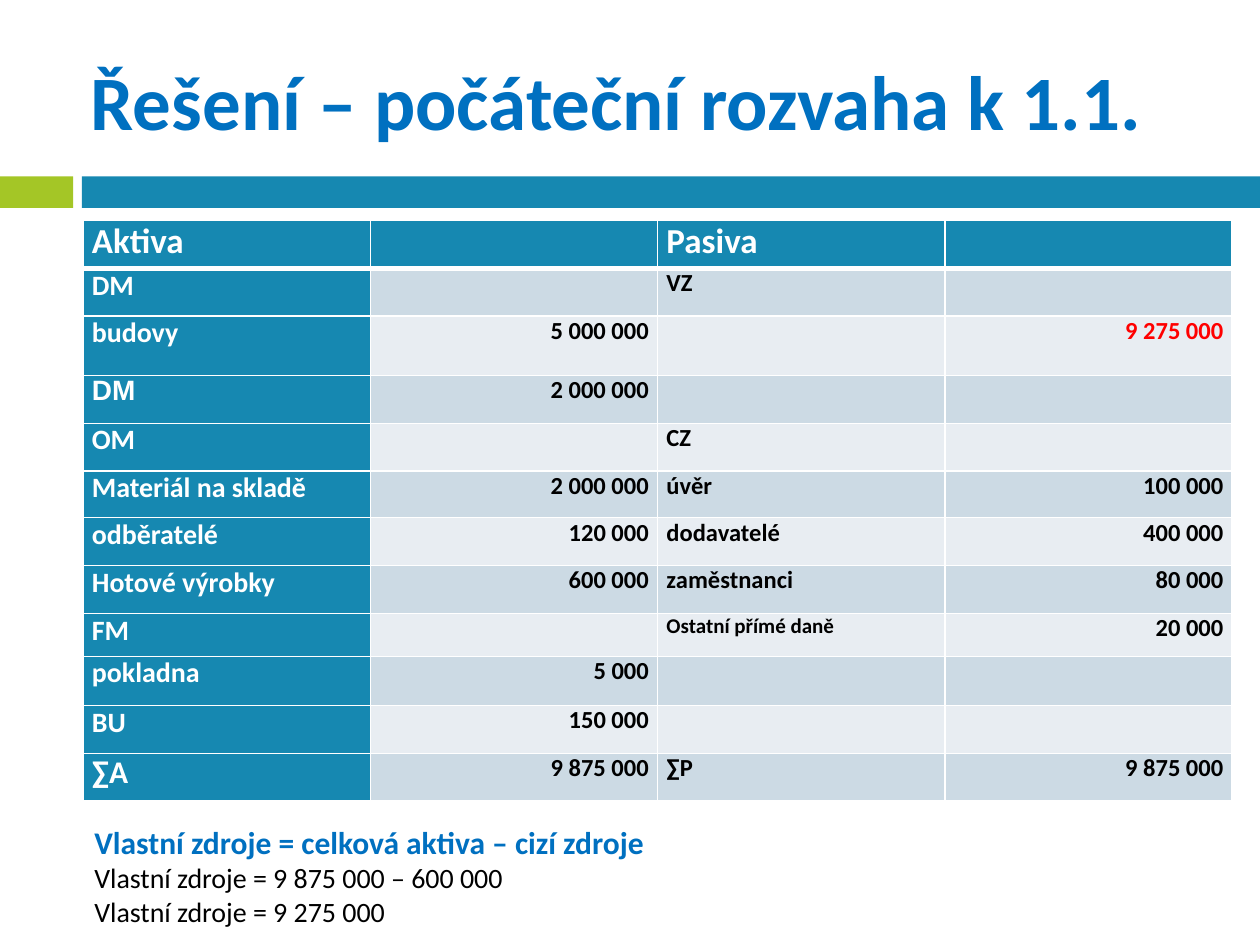
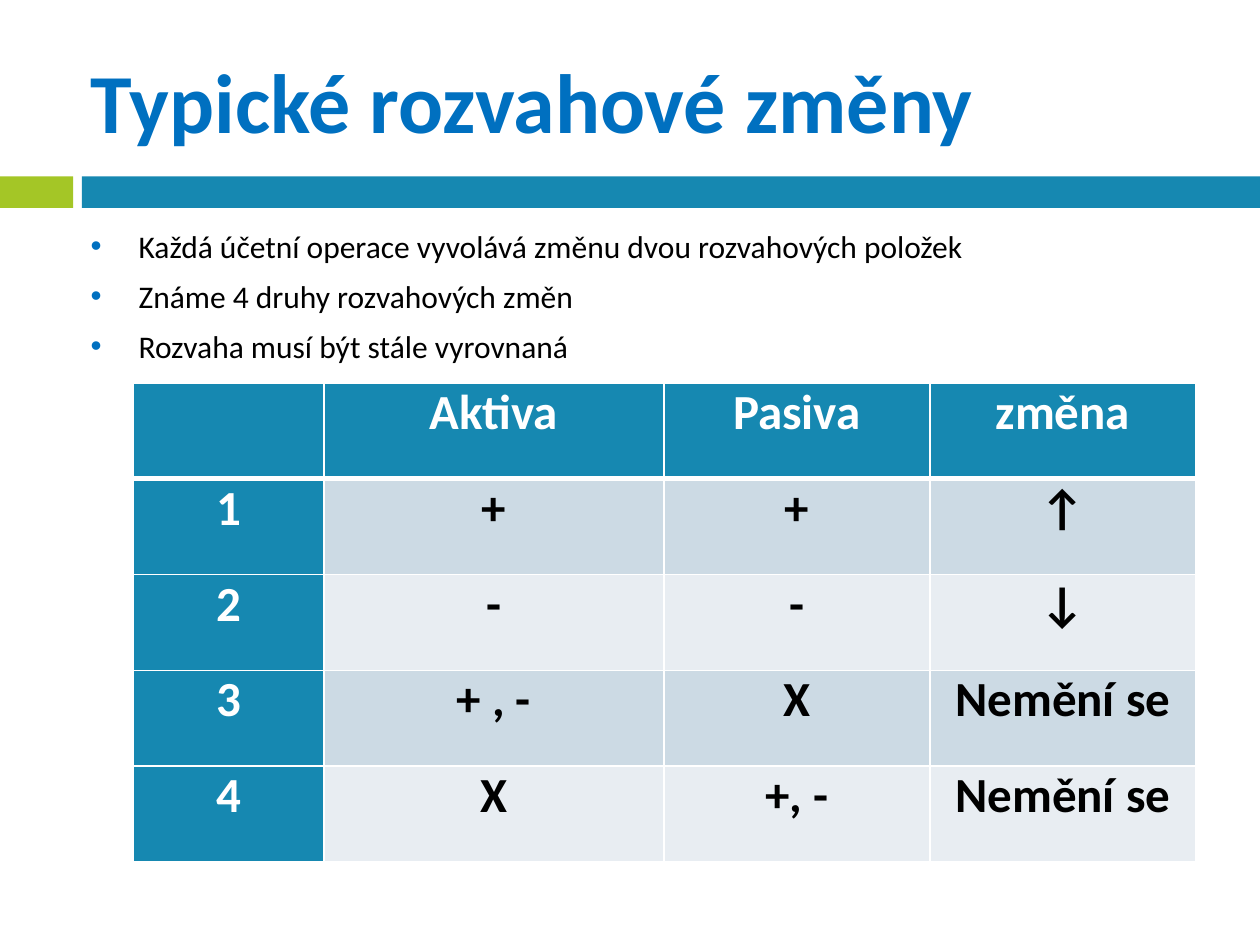
from lxml.etree import SubElement
from pptx import Presentation
from pptx.dml.color import RGBColor
from pptx.enum.shapes import MSO_SHAPE
from pptx.enum.text import MSO_ANCHOR, PP_ALIGN
from pptx.oxml import parse_xml
from pptx.oxml.ns import nsdecls, qn
from pptx.util import Inches, Pt

BLUE, TEAL, GREEN = "0070C0", "1688B1", "A4C626"
WHITE, BLACK, RED = "FFFFFF", "000000", "FF0000"
BANDS = ("CCDAE4", "E8EDF2")
FONT = "Calibri"
SIDES = ("L", "R", "T", "B")

BALANCE_SHEET = [
    ("Aktiva", "", "Pasiva", ""),
    ("DM", "", "VZ", ""),
    ("budovy", "5 000 000", "", "9 275 000"),
    ("DM", "2 000 000", "", ""),
    ("OM", "", "CZ", ""),
    ("Materiál na skladě", "2 000 000", "úvěr", "100 000"),
    ("odběratelé", "120 000", "dodavatelé", "400 000"),
    ("Hotové výrobky", "600 000", "zaměstnanci", "80 000"),
    ("FM", "", "Ostatní přímé daně", "20 000"),
    ("pokladna", "5 000", "", ""),
    ("BU", "150 000", "", ""),
    ("∑A", "9 875 000", "∑P", "9 875 000"),
]
BALANCE_HEIGHTS = [0.38, 0.38, 0.47, 0.38, 0.38, 0.37,
                   0.38, 0.38, 0.34, 0.39, 0.38, 0.38]
BALANCE_EXCEPTIONS = {
    (2, 3): {"color": RED},
    (3, 0): {"font": "Arial"},
    (8, 2): {"size": 12},
    (11, 0): {"size": 18},
}
CHANGES = [
    ("", "Aktiva", "Pasiva", "změna"),
    ("1", "+", "+", "↑"),
    ("2", "-", "-", "↓"),
    ("3", "+ , -", "X", "Nemění se"),
    ("4", "X", "+, -", "Nemění se"),
]


def rgb(value):
    return RGBColor.from_string(value)


class Deck:
    """Holds the shared style and the slide being filled."""

    def __init__(self):
        self.prs = Presentation()
        self.prs.slide_width, self.prs.slide_height = Inches(10), Inches(7.5)
        self.slide = None

    def add_slide(self, title, size):
        self.slide = self.prs.slides.add_slide(self.prs.slide_layouts[6])
        self.band(0, 0.58, GREEN)
        self.band(0.65, 9.35, TEAL)
        self.text(0.67, 0.25, 8.92, 1.08, [(title, size, BLUE, True)],
                  inset=0.05, anchor=MSO_ANCHOR.MIDDLE)

    def band(self, left, width, color):
        band = self.slide.shapes.add_shape(
            MSO_SHAPE.RECTANGLE, Inches(left), Inches(1.4), Inches(width), Inches(0.25))
        band.shadow.inherit = False
        band.fill.solid()
        band.fill.fore_color.rgb = rgb(color)
        band.line.fill.background()

    def styled_line(self, paragraph, text, size, color, bold, font=FONT):
        paragraph.text = text
        style = paragraph.runs[0].font
        style.name, style.size, style.bold = font, Pt(size), bold
        style.color.rgb = rgb(color)

    def text(self, left, top, width, height, lines, inset=0.1, anchor=MSO_ANCHOR.TOP):
        """Adds a text box; each line is (text, size, color, bold)."""
        frame = self.slide.shapes.add_textbox(
            Inches(left), Inches(top), Inches(width), Inches(height)).text_frame
        frame.word_wrap = True
        frame.vertical_anchor = anchor
        frame.margin_left = frame.margin_right = Inches(inset)
        for index, line in enumerate(lines):
            paragraph = frame.add_paragraph() if index else frame.paragraphs[0]
            self.styled_line(paragraph, *line)
        return frame

    def bullets(self, left, top, width, height, items, size):
        lines = [(item, size, BLACK, False) for item in items]
        frame = self.text(left, top, width, height, lines, inset=0.05)
        for paragraph in frame.paragraphs:
            paragraph.space_before = Pt(7)
            props = paragraph._p.get_or_add_pPr()
            props.set("marL", str(Inches(0.38)))
            props.set("indent", str(-Inches(0.38)))
            color = SubElement(props, qn("a:buClr"))
            SubElement(color, qn("a:srgbClr"), val=BLUE)
            SubElement(props, qn("a:buFont"), typeface="Arial")
            SubElement(props, qn("a:buChar"), char="•")

    def borders(self, cell, row):
        """Draws white cell borders, thicker between the header and the body."""
        thick = {(0, "B"), (1, "T")}
        for place, side in enumerate(SIDES):
            width = Pt(3 if (row, side) in thick else 1)
            cell._tc.get_or_add_tcPr().insert(place, parse_xml(
                f'<a:ln{side} {nsdecls("a")} w="{width}"><a:solidFill>'
                f'<a:srgbClr val="{WHITE}"/></a:solidFill></a:ln{side}>'))

    def table(self, left, top, widths, heights, rows, sizes, aligns, exceptions=None):
        """Adds a table; sizes are those of header, first column and body."""
        header_size, label_size, body_size = sizes
        table = self.slide.shapes.add_table(
            len(rows), len(widths), Inches(left), Inches(top),
            Inches(sum(widths)), Inches(sum(heights))).table
        for column, width in zip(table.columns, widths):
            column.width = Inches(width)
        for r, (values, height) in enumerate(zip(rows, heights)):
            table.rows[r].height = Inches(height)
            for c, value in enumerate(values):
                cell = table.cell(r, c)
                heading = r == 0 or c == 0
                cell.margin_left = cell.margin_right = Inches(0.07)
                cell.margin_top = cell.margin_bottom = 0
                cell.fill.solid()
                cell.fill.fore_color.rgb = rgb(TEAL if heading else BANDS[(r - 1) % 2])
                self.borders(cell, r)
                if not value:
                    continue
                style = {
                    "size": header_size if r == 0 else label_size if c == 0 else body_size,
                    "color": WHITE if heading else BLACK,
                    "bold": True,
                }
                style.update((exceptions or {}).get((r, c), {}))
                paragraph = cell.text_frame.paragraphs[0]
                self.styled_line(paragraph, value, **style)
                paragraph.alignment = aligns[c]


def add_balance_slide(deck):
    deck.add_slide("Řešení – počáteční rozvaha k 1.1.", 44)
    deck.table(0.66, 1.75, [2.28] * 4, BALANCE_HEIGHTS, BALANCE_SHEET, (20, 16, 14),
               [PP_ALIGN.JUSTIFY, PP_ALIGN.RIGHT] * 2, BALANCE_EXCEPTIONS)
    deck.text(0.65, 6.48, 8.68, 0.94, [
        ("Vlastní zdroje = celková aktiva – cizí zdroje", 18, BLUE, True),
        ("Vlastní zdroje = 9 875 000 – 600 000", 16, BLACK, False),
        ("Vlastní zdroje = 9 275 000", 16, BLACK, False),
    ], anchor=MSO_ANCHOR.MIDDLE)


def add_changes_slide(deck):
    deck.add_slide("Typické rozvahové změny", 48)
    deck.bullets(0.67, 1.75, 8.92, 1.25, [
        "Každá účetní operace vyvolává změnu dvou rozvahových položek",
        "Známe 4 druhy rozvahových změn",
        "Rozvaha musí být stále vyrovnaná",
    ], 18)
    deck.table(1.06, 3.04, [1.51, 2.7, 2.11, 2.11], [0.76] * 5, CHANGES,
               (28, 28, 28), [PP_ALIGN.CENTER] * 4)


def main():
    deck = Deck()
    add_balance_slide(deck)
    add_changes_slide(deck)
    deck.prs.save("out.pptx")


if __name__ == "__main__":
    main()
